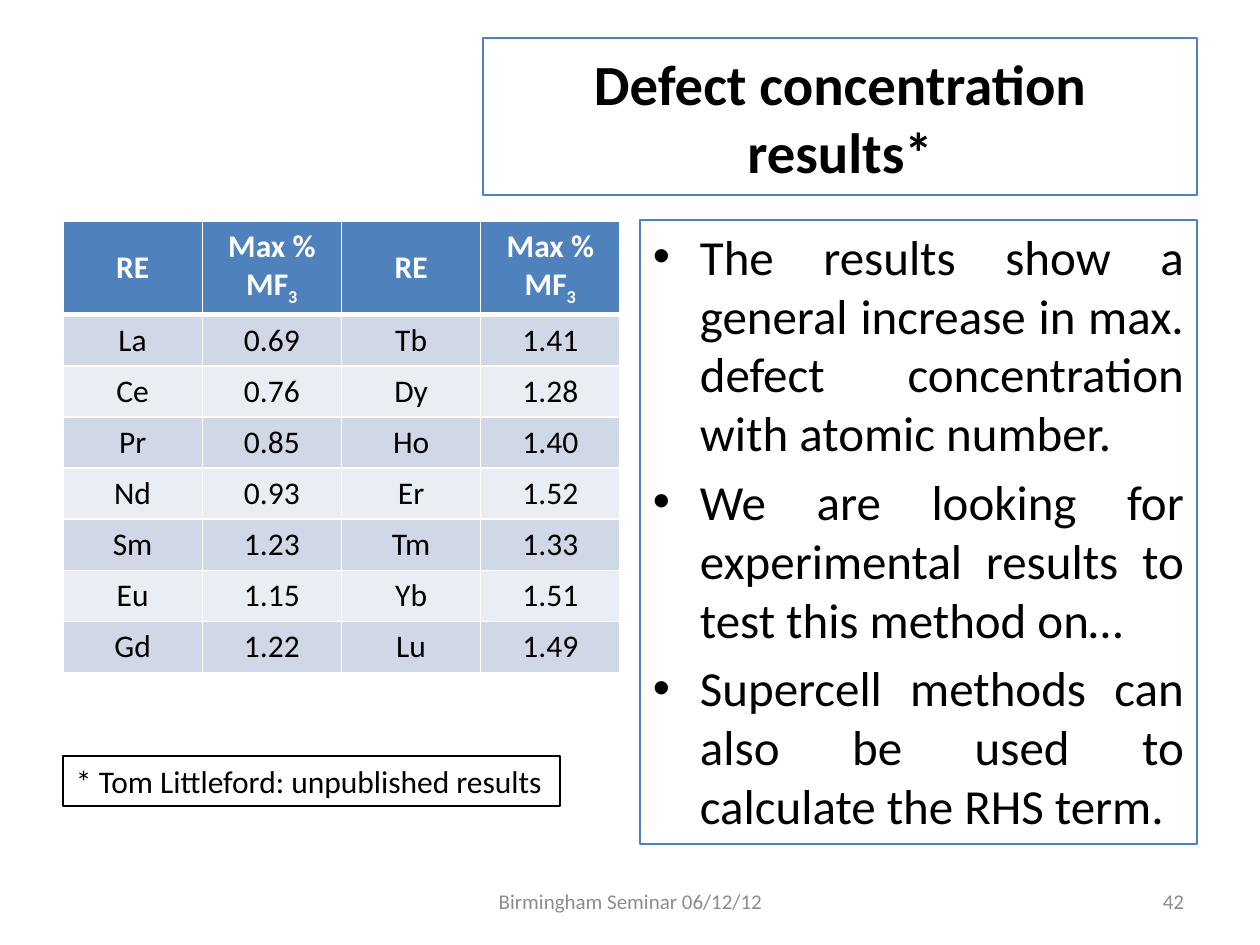
"""Build the slide of defect concentration results."""
from dataclasses import dataclass
from typing import Any

from lxml.etree import SubElement
from pptx import Presentation
from pptx.dml.color import RGBColor
from pptx.enum.text import MSO_ANCHOR, PP_ALIGN
from pptx.oxml.ns import qn
from pptx.util import Emu, Pt


@dataclass(frozen=True)
class Theme:
    font: str = "Calibri"
    black: str = "000000"
    white: str = "FFFFFF"
    blue: str = "4F81BD"
    gray: str = "8C8C8C"
    bands: tuple[str, str] = ("D0D8E8", "E9EDF4")
    title: float = 32.4
    body: float = 28
    small: float = 18
    foot: float = 12
    rule: float = 0.75


@dataclass(frozen=True)
class Box:
    left: int
    top: int
    width: int
    height: int
    lines: tuple[str, ...]
    size: float
    color: str = "000000"
    edge: str = ""
    align: Any = PP_ALIGN.LEFT
    anchor: Any = MSO_ANCHOR.TOP
    bold: bool = False
    bullet: bool = False
    wrap: bool = True
    inset: int = 13


THEME = Theme()
SCALE = 914400 / 126
INDENT = 47
GRID = (63, 221, 557)
HEAD_ROW, ROW = 92, 51
HEAD = ("RE", "Max % MF_3") * 2
LEFT = {"La": "0.69", "Ce": "0.76", "Pr": "0.85", "Nd": "0.93",
        "Sm": "1.23", "Eu": "1.15", "Gd": "1.22"}
RIGHT = {"Tb": "1.41", "Dy": "1.28", "Ho": "1.40", "Er": "1.52",
         "Tm": "1.33", "Yb": "1.51", "Lu": "1.49"}
BOXES = (
    Box(483, 38, 714, 157, ("Defect concentration results*",), THEME.title,
        edge=THEME.blue, align=PP_ALIGN.CENTER, anchor=MSO_ANCHOR.MIDDLE,
        bold=True, inset=30),
    Box(640, 220, 557, 624, (
        "The results show a general increase in max. defect concentration with atomic number.",
        "We are looking for experimental results to test this method on…",
        "Supercell methods can also be used to calculate the RHS term.",
    ), THEME.body, edge=THEME.blue, align=PP_ALIGN.JUSTIFY, bullet=True),
    Box(431, 876, 399, 50, ("Birmingham Seminar 06/12/12",), THEME.foot,
        color=THEME.gray, align=PP_ALIGN.CENTER, anchor=MSO_ANCHOR.MIDDLE),
    Box(903, 876, 294, 50, ("42",), THEME.foot, color=THEME.gray,
        align=PP_ALIGN.RIGHT, anchor=MSO_ANCHOR.MIDDLE),
    Box(63, 756, 497, 50, ("* Tom Littleford: unpublished results",),
        THEME.small, edge=THEME.black, wrap=False),
)


def px(count: int) -> Emu:
    """Turn pixels into EMU."""
    return Emu(round(count * SCALE))


def write(frame: Any, lines: tuple[str, ...], *, size: float, color: str,
          align: Any, bold: bool = False, bullet: bool = False) -> None:
    """Fill a text frame, lowering whatever follows an underscore."""
    for index, line in enumerate(lines):
        para = frame.add_paragraph() if index else frame.paragraphs[0]
        para.alignment = align
        if index:
            para.space_before = Pt(size * 0.2)
        if bullet:
            props = para._p.get_or_add_pPr()
            props.set("marL", str(px(INDENT)))
            props.set("indent", str(-px(INDENT)))
            SubElement(props, qn("a:buFont"), typeface="Arial")
            SubElement(props, qn("a:buChar"), char="•")
        for part, text in enumerate(line.split("_")):
            run = para.add_run()
            run.text = text
            run.font.name = THEME.font
            run.font.size = Pt(size)
            run.font.bold = bold
            run.font.color.rgb = RGBColor.from_string(color)
            if part:
                run._r.get_or_add_rPr().set("baseline", "-25000")


def draw_box(slide: Any, box: Box) -> None:
    """Draw one text box, with an edge if it has one."""
    shape = slide.shapes.add_textbox(
        px(box.left), px(box.top), px(box.width), px(box.height))
    frame = shape.text_frame
    frame.word_wrap = box.wrap
    frame.vertical_anchor = box.anchor
    frame.margin_left = frame.margin_right = px(box.inset)
    if box.edge:
        shape.line.color.rgb = RGBColor.from_string(box.edge)
        shape.line.width = Pt(THEME.rule)
    write(frame, box.lines, size=box.size, color=box.color,
          align=box.align, bold=box.bold, bullet=box.bullet)


def edge_cell(cell: Any, base: int, top: int) -> None:
    """Put white borders round a cell, ahead of its fill."""
    props = cell._tc.get_or_add_tcPr()
    for side, width in (("L", 1), ("R", 1), ("T", top), ("B", base)):
        line = SubElement(props, qn(f"a:ln{side}"), w=str(Pt(width)))
        fill = SubElement(line, qn("a:solidFill"))
        SubElement(fill, qn("a:srgbClr"), val=THEME.white)


def draw_table(slide: Any) -> None:
    """Draw the table of limits by element."""
    rows = [HEAD] + [a + b for a, b in zip(LEFT.items(), RIGHT.items())]
    left, top, width = GRID
    tall = HEAD_ROW + ROW * len(LEFT)
    table = slide.shapes.add_table(
        len(rows), len(HEAD), px(left), px(top), px(width), px(tall)).table
    table.horz_banding = False
    for i, row in enumerate(rows):
        head = i == 0
        table.rows[i].height = px(HEAD_ROW if head else ROW)
        for j, text in enumerate(row):
            cell = table.cell(i, j)
            edge_cell(cell, 3 if head else 1, 3 if i == 1 else 1)
            cell.fill.solid()
            cell.fill.fore_color.rgb = RGBColor.from_string(
                THEME.blue if head else THEME.bands[(i - 1) % 2])
            middle = head or j % 2 == 0
            cell.vertical_anchor = MSO_ANCHOR.MIDDLE if middle else MSO_ANCHOR.TOP
            write(cell.text_frame, (text,), size=THEME.small,
                  color=THEME.white if head else THEME.black,
                  align=PP_ALIGN.CENTER, bold=head)


def main() -> None:
    """Build and save the deck."""
    deck = Presentation()
    deck.slide_width, deck.slide_height = px(1260), px(945)
    slide = deck.slides.add_slide(deck.slide_layouts[6])
    draw_table(slide)
    for box in BOXES:
        draw_box(slide, box)
    deck.save("out.pptx")


if __name__ == "__main__":
    main()
